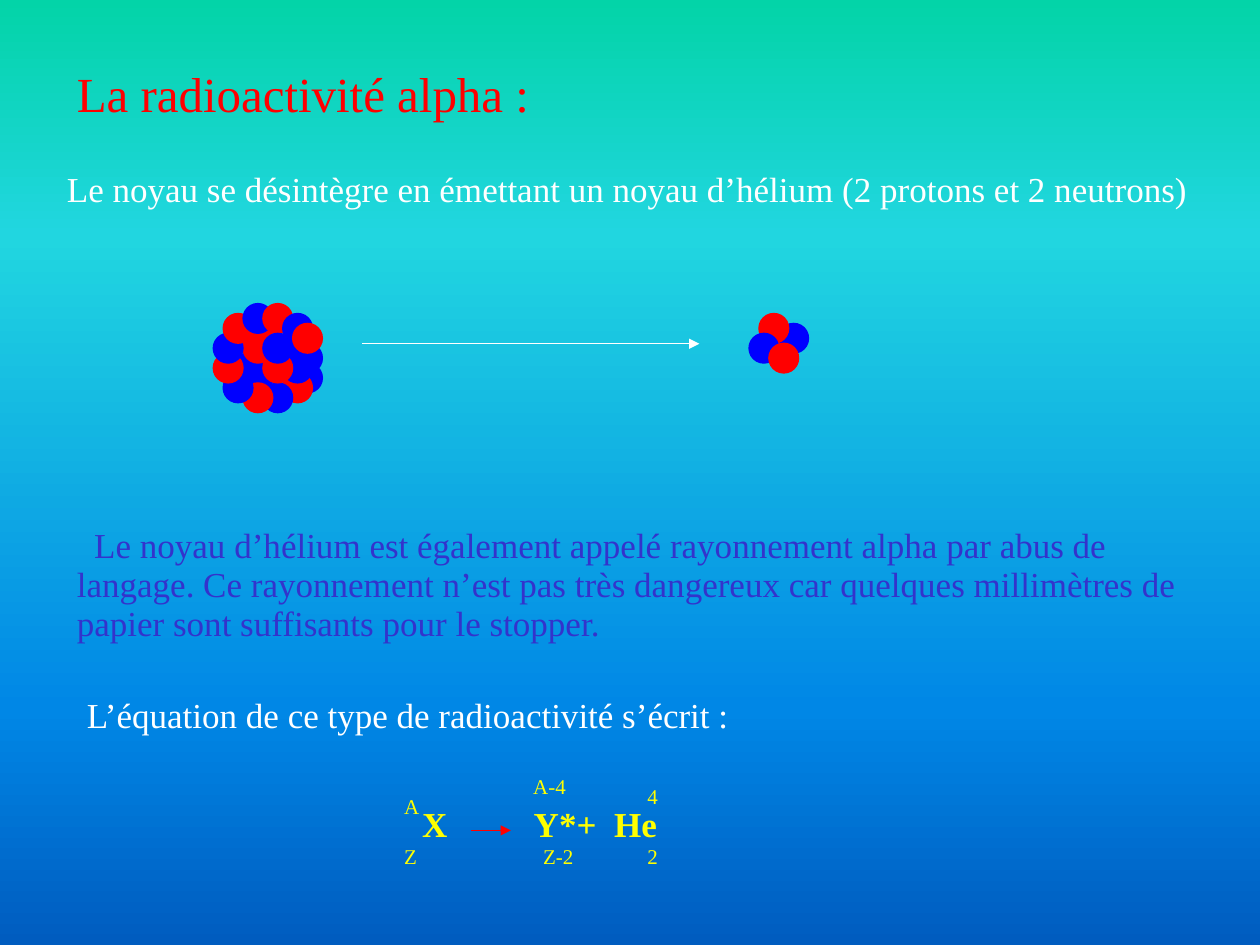
"""Build the slide on alpha radioactivity."""
from pptx import Presentation
from pptx import util as u
from pptx.dml.color import RGBColor
from pptx.enum import shapes, text
from pptx.oxml import ns, xmlchemy

RED = RGBColor(0xFF, 0x00, 0x00)
BLUE = RGBColor(0x00, 0x00, 0xFF)
WHITE = RGBColor(0xFF, 0xFF, 0xFF)
YELLOW = RGBColor(0xFF, 0xFF, 0x00)
INDIGO = RGBColor(0x33, 0x33, 0xCC)
FONT = "Times New Roman"

BACKGROUND = [
    (0, RGBColor(0x03, 0xD4, 0xA8)),
    (25, RGBColor(0x21, 0xD6, 0xE0)),
    (75, RGBColor(0x00, 0x87, 0xE6)),
    (100, RGBColor(0x00, 0x5C, 0xBF)),
]

TITLE = {"size": u.Pt(28), "color": RED, "spacing": 0.95}
BODY = {"size": u.Pt(20), "color": WHITE, "spacing": 0.95}
NOTE = {"size": u.Pt(20), "color": INDIGO, "spacing": 0.93, "indent": 0.35}
EQUATION = {"size": u.Pt(20), "color": YELLOW, "spacing": 0.93, "bold": True,
            "tabs": (2.29, 4.54, 6.16)}
INDEX = {"size": u.Pt(12), "color": YELLOW, "spacing": 0.93}

TEXTS = [
    ("La radioactivité alpha :", (1.3, 1.25, 9.86, 1.42), TITLE),
    ("Le noyau se désintègre en émettant un noyau d’hélium (2 protons et 2 neutrons)",
     (1.1, 3.32, 23.6, 2), BODY),
    ("Le noyau d’hélium est également appelé rayonnement alpha par abus de langage. "
     "Ce rayonnement n’est pas très dangereux car quelques millimètres de papier "
     "sont suffisants pour le stopper.", (1.3, 10.5, 23.4, 2.92), NOTE),
    ("L’équation de ce type de radioactivité s’écrit :", (1.5, 13.91, 15.4, 1.12), BODY),
    ("\tX\tY*+\tHe", (5.97, 16.12, 11.33, 1.07), EQUATION),
    ("A", (7.9, 15.92, 1.6, 0.77), INDEX),
    ("Z", (7.9, 16.92, 2, 0.77), INDEX),
    ("A-4", (10.5, 15.52, 1.6, 0.77), INDEX),
    ("Z-2", (10.7, 16.92, 2, 0.77), INDEX),
    ("4", (12.8, 15.72, 2, 0.77), INDEX),
    ("2", (12.8, 16.92, 1.8, 0.77), INDEX),
]

STEP, BALL = 0.2, 0.6
NUCLEUS = [
    (BLUE, 8, 4), (BLUE, 3, 5), (BLUE, 6, 3), (RED, 4, 3), (BLUE, 2, 5), (BLUE, 3, 6),
    (RED, 3, 2), (RED, 3, 3), (BLUE, 8, 6), (RED, 7, 7), (BLUE, 5, 8), (RED, 3, 8),
    (BLUE, 1, 7), (RED, 0, 5), (BLUE, 0, 3), (RED, 1, 1), (BLUE, 3, 0), (RED, 5, 0),
    (BLUE, 7, 1), (BLUE, 7, 5), (RED, 5, 5), (BLUE, 5, 3), (RED, 8, 2),
]
HELIUM = [(BLUE, 3, 2), (RED, 1, 1), (BLUE, 0, 3), (RED, 2, 4)]
CLUSTERS = [(4.3, 6.12, NUCLEUS), (15.1, 6.12, HELIUM)]
ARROWS = [(7.3, 14.1, 6.93, WHITE), (9.5, 10.3, 16.74, RED)]


def add_child(parent, tag, **attrs):
    child = xmlchemy.OxmlElement(tag)
    for name, value in attrs.items():
        child.set(name, str(value))
    parent.append(child)
    return child


def paint_background(s):
    fill = s.background.fill
    fill.gradient()
    fill.gradient_angle = 270
    stops = next(s.element.iter(ns.qn("a:gsLst")))
    for stop in list(stops):
        stops.remove(stop)
    for position, color in BACKGROUND:
        stop = add_child(stops, "a:gs", pos=position * 1000)
        add_child(stop, "a:srgbClr", val=color)


def add_text(s, words, box, style):
    tf = s.shapes.add_textbox(*map(u.Cm, box)).text_frame
    for name, value in {"word_wrap": True, "vertical_anchor": text.MSO_ANCHOR.TOP}.items():
        setattr(tf, name, value)
    p = tf.paragraphs[0]
    p.line_spacing = style["spacing"]
    p_pr = p._p.get_or_add_pPr()
    if "indent" in style:
        p_pr.set("indent", str(u.Cm(style["indent"])))
    if "tabs" in style:
        tabs = add_child(p_pr, "a:tabLst")
        for position in style["tabs"]:
            add_child(tabs, "a:tab", pos=u.Cm(position), algn="l")
    r = p.add_run()
    r.text = words
    font = {"name": FONT, "size": style["size"], "bold": style.get("bold", False)}
    for name, value in font.items():
        setattr(r.font, name, value)
    r.font.color.rgb = style["color"]


def add_cluster(s, left, top, balls):
    for color, col, row in balls:
        sp = s.shapes.add_shape(shapes.MSO_SHAPE.OVAL, u.Cm(left + col * STEP),
                                u.Cm(top + row * STEP), u.Cm(BALL), u.Cm(BALL))
        sp.shadow.inherit = False
        for fill in (sp.fill, sp.line.fill):
            fill.solid()
            fill.fore_color.rgb = color
        sp.line.width = u.Pt(0.75)


def add_arrow(s, start, end, y, color):
    line = s.shapes.add_connector(shapes.MSO_CONNECTOR.STRAIGHT,
                                  u.Cm(start), u.Cm(y), u.Cm(end), u.Cm(y))
    line.line.color.rgb = color
    line.line.width = u.Pt(0.75)
    add_child(line.line._get_or_add_ln(), "a:tailEnd", type="triangle")
    add_child(line._element.spPr, "a:effectLst")


def main():
    prs = Presentation()
    prs.slide_width, prs.slide_height = u.Cm(25.4), u.Cm(19.05)
    s = prs.slides.add_slide(prs.slide_layouts[6])
    paint_background(s)
    for item in TEXTS:
        add_text(s, *item)
    for cluster in CLUSTERS:
        add_cluster(s, *cluster)
    for arrow in ARROWS:
        add_arrow(s, *arrow)
    prs.save("out.pptx")


if __name__ == "__main__":
    main()
